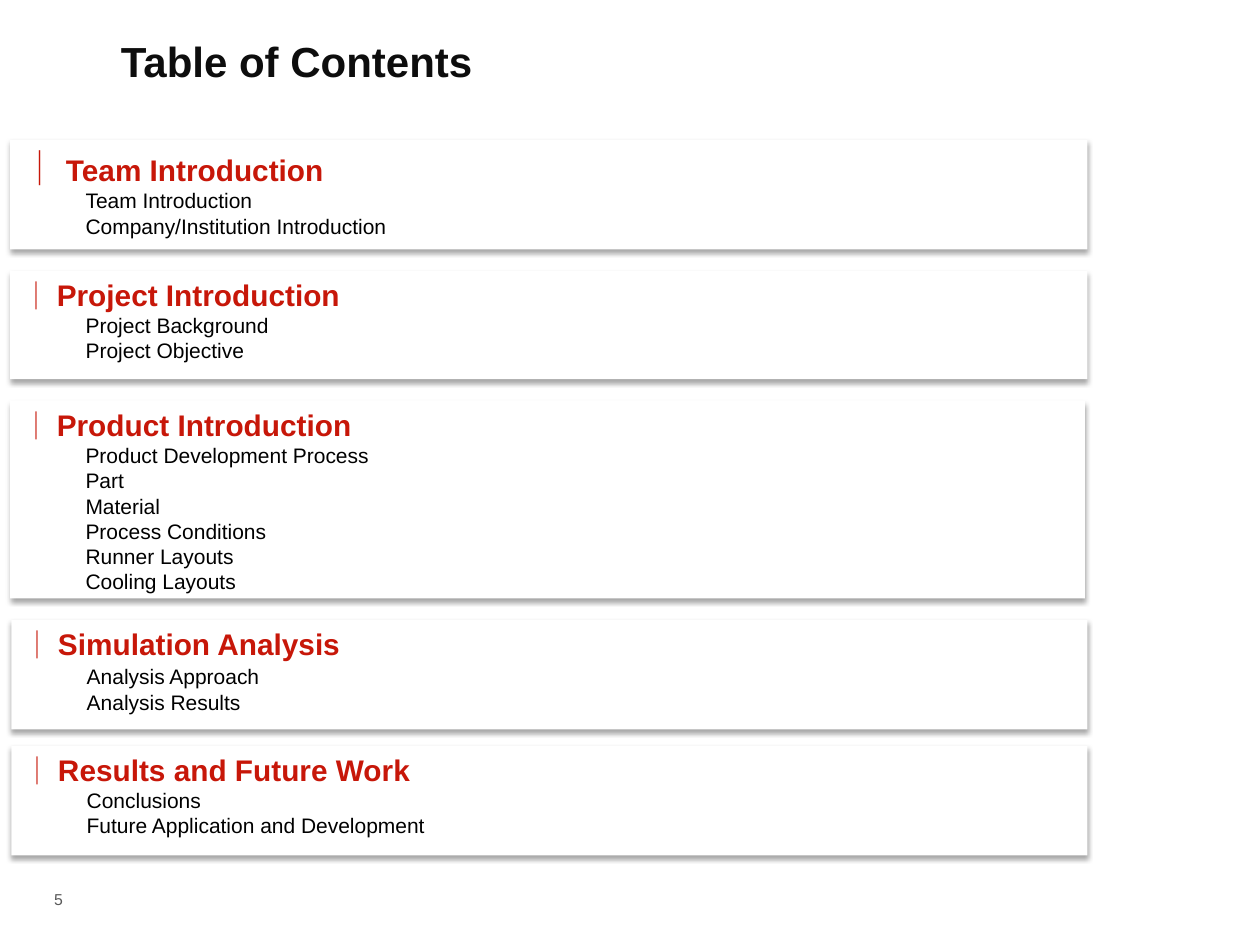
from dataclasses import dataclass

import lxml.etree
import pptx
import pptx.dml.color
import pptx.enum.shapes
import pptx.enum.text
import pptx.oxml.ns
import pptx.util

Pt = pptx.util.Pt
qn = pptx.oxml.ns.qn


@dataclass(frozen=True)
class Theme:
    latin: str = "Arial"
    marker_font: str = "Noto Sans CJK KR"
    ink: str = "0D0D0D"
    accent: str = "C71709"
    body: str = "000000"
    muted: str = "595959"
    panel: str = "FFFFFF"
    title_size: float = 24
    heading_size: float = 17
    body_size: float = 12
    number_size: float = 9


@dataclass(frozen=True)
class Section:
    heading: str
    items: tuple[str, ...]
    left: float
    top: float
    width: float
    height: float
    level: int = 1
    marker: str = "│ "
    marker_size: float = 16
    line_spacing: float = 1.0
    space_before: float = 0


THEME = Theme()
SECTIONS = (
    Section("\u0020Team Introduction",
            ("Team Introduction\nCompany/Institution Introduction",),
            5.8, 79.9, 615.6, 62.6, marker="│", marker_size=20),
    Section("Project Introduction", ("Project Background", "Project Objective"),
            5.8, 154.8, 615.6, 61.9),
    Section("Product Introduction",
            ("Product Development Process", "Part", "Material\nProcess Conditions",
             "Runner Layouts", "Cooling Layouts"),
            5.8, 229, 614.2, 113, level=3),
    Section("Simulation Analysis", ("Analysis Approach", "Analysis Results"),
            6.5, 354.2, 614.9, 62.6, line_spacing=0.9, space_before=2.4),
    Section("Results and Future Work",
            ("Conclusions", "Future Application and Development"),
            6.5, 426.2, 614.9, 62.6, level=2),
)


def add_text(para, text: str, *, size: float, color: str,
             font: str = THEME.latin, bold: bool = False) -> None:
    """Append formatted text; a newline becomes a line break."""
    for index, line in enumerate(text.split("\n")):
        if index:
            para.add_line_break()
        span = para.add_run()
        span.text = line
        span.font.name = font
        span.font.size = Pt(size)
        span.font.bold = bold
        span.font.color.rgb = pptx.dml.color.RGBColor.from_string(color)


def add_soft_shadow(box) -> None:
    box.shadow.inherit = False
    effects = box.element.spPr.find(qn("a:effectLst"))
    shadow = lxml.etree.SubElement(
        effects, qn("a:outerShdw"), blurRad=str(Pt(3.1)), dist=str(Pt(1.8)),
        dir="5400000", algn="t", rotWithShape="0")
    color = lxml.etree.SubElement(shadow, qn("a:srgbClr"), val="000000")
    lxml.etree.SubElement(color, qn("a:alpha"), val="35000")


def add_section(page, section: Section) -> None:
    box = page.shapes.add_shape(
        pptx.enum.shapes.MSO_SHAPE.RECTANGLE, Pt(section.left), Pt(section.top),
        Pt(section.width), Pt(section.height))
    box.fill.solid()
    box.fill.fore_color.rgb = pptx.dml.color.RGBColor.from_string(THEME.panel)
    box.line.fill.background()
    add_soft_shadow(box)
    frame = box.text_frame
    frame.word_wrap = True
    frame.vertical_anchor = pptx.enum.text.MSO_ANCHOR.TOP

    para = frame.paragraphs[0]
    para.alignment = pptx.enum.text.PP_ALIGN.LEFT
    add_text(para, section.marker, size=section.marker_size, color=THEME.accent,
             font=THEME.marker_font, bold=True)
    add_text(para, section.heading, size=THEME.heading_size, color=THEME.accent, bold=True)
    for item in section.items:
        para = frame.add_paragraph()
        para.alignment = pptx.enum.text.PP_ALIGN.LEFT
        para.level = section.level
        para.line_spacing = section.line_spacing
        para.space_before = Pt(section.space_before)
        properties = para._p.get_or_add_pPr()
        properties.set("marL", str(Pt(36)))
        properties.set("indent", "0")
        add_text(para, item, size=THEME.body_size, color=THEME.body)


def add_title(page, text: str) -> None:
    title = page.shapes.title
    title.left, title.top, title.width, title.height = Pt(61.9), Pt(9.4), Pt(624.2), Pt(51.1)
    title.text_frame.vertical_anchor = pptx.enum.text.MSO_ANCHOR.MIDDLE
    para = title.text_frame.paragraphs[0]
    para.alignment = pptx.enum.text.PP_ALIGN.LEFT
    add_text(para, text, size=THEME.title_size, color=THEME.ink, bold=True)


def add_page_number(page, number: str) -> None:
    box = page.shapes.add_textbox(Pt(23.8), Pt(502.6), Pt(58.3), Pt(22.3))
    box.text_frame.word_wrap = True
    box.text_frame.vertical_anchor = pptx.enum.text.MSO_ANCHOR.MIDDLE
    add_text(box.text_frame.paragraphs[0], number, size=THEME.number_size, color=THEME.muted)


def main() -> None:
    deck = pptx.Presentation()
    deck.slide_width, deck.slide_height = Pt(720), Pt(540)
    page = deck.slides.add_slide(deck.slide_layouts.get_by_name("Title Only"))
    add_title(page, "Table of Contents")
    for section in SECTIONS:
        add_section(page, section)
    add_page_number(page, "5")
    deck.save("out.pptx")


if __name__ == "__main__":
    main()
